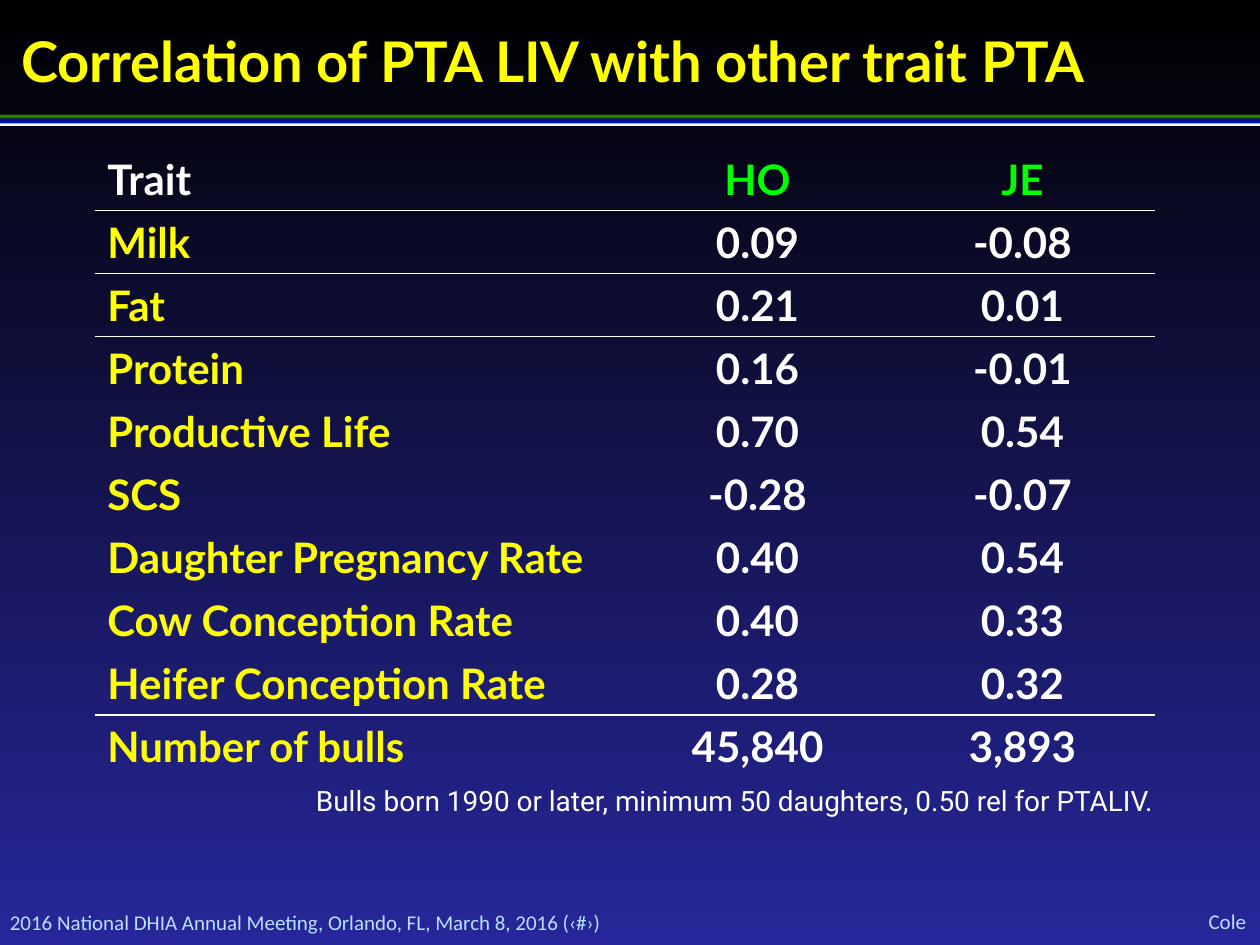
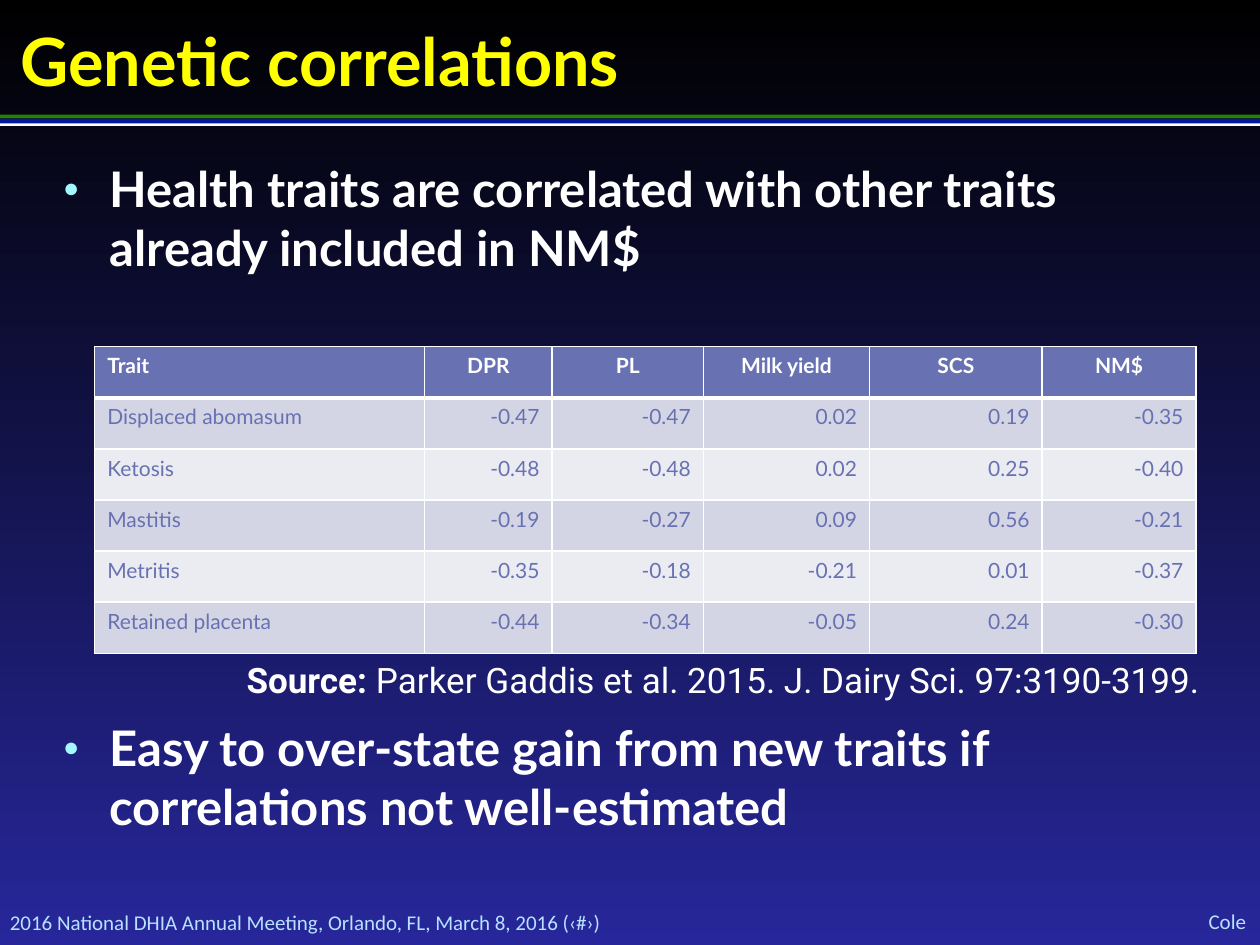
from dataclasses import dataclass

from lxml import etree
from pptx import Presentation
from pptx.dml.color import RGBColor
from pptx.enum.shapes import MSO_SHAPE
from pptx.enum.text import MSO_ANCHOR, MSO_AUTO_SIZE, PP_ALIGN
from pptx.oxml.ns import qn
from pptx.util import Cm, Pt

LEFT, CENTER, RIGHT = PP_ALIGN.LEFT, PP_ALIGN.CENTER, PP_ALIGN.RIGHT
TOP, MIDDLE = MSO_ANCHOR.TOP, MSO_ANCHOR.MIDDLE
RECTANGLE = MSO_SHAPE.RECTANGLE
NO_AUTOFIT = MSO_AUTO_SIZE.NONE
TITLE_AND_CONTENT, TITLE_ONLY = 1, 5
PLAIN_TABLE_STYLE = "{2D5ABB26-0587-4C30-8999-92F81FD0307C}"


@dataclass(frozen=True)
class Theme:
    heading_font: str = "Lato"
    note_font: str = "Roboto"
    footer_font: str = "Calibri"
    background_top: str = "000000"
    background_bottom: str = "27279B"
    yellow: str = "FFFF00"
    white: str = "FFFFFF"
    green: str = "00FF00"
    footer: str = "B8E2FF"
    bullet: str = "A3F8FF"
    band_green: str = "2A7E00"
    band_blue: str = "001799"
    table_head: str = "6871B2"
    table_dark: str = "D4D5E4"
    table_light: str = "EBEBF2"
    long_title_size: int = 32
    title_size: int = 38
    body_size: int = 28
    trait_size: int = 24
    source_size: int = 20
    note_size: int = 16
    small_size: int = 12


THEME = Theme()


@dataclass(frozen=True)
class Box:
    """Left, top, width and height in centimetres."""
    left: float
    top: float
    width: float
    height: float

    def lengths(self) -> tuple:
        return Cm(self.left), Cm(self.top), Cm(self.width), Cm(self.height)


@dataclass(frozen=True)
class TextStyle:
    font: str
    size: int
    color: str
    bold: bool = False
    align: int = LEFT


@dataclass(frozen=True)
class Band:
    box: Box
    color: str


@dataclass(frozen=True)
class Footer:
    text: str
    box: Box
    align: int


BANDS = (
    Band(Box(0, 2.31, 25.4, 0.08), THEME.band_green),
    Band(Box(0, 2.46, 25.4, 0.08), THEME.white),
    Band(Box(0, 2.39, 25.4, 0.1), THEME.band_blue),
)
FOOTERS = (
    Footer("2016 National DHIA Annual Meeting, Orlando, FL, March 8, 2016 (‹#›)",
           Box(0.2, 18.34, 21.59, 0.51), LEFT),
    Footer("Cole", Box(22.28, 18.31, 2.84, 0.53), RIGHT),
)

TRAIT_ROWS = (
    ("Trait", "HO", "JE"),
    ("Milk", "0.09", "-0.08"),
    ("Fat", "0.21", "0.01"),
    ("Protein", "0.16", "-0.01"),
    ("Productive Life", "0.70", "0.54"),
    ("SCS", "-0.28", "-0.07"),
    ("Daughter Pregnancy Rate", "0.40", "0.54"),
    ("Cow Conception Rate", "0.40", "0.33"),
    ("Heifer Conception Rate", "0.28", "0.32"),
    ("Number of bulls", "45,840", "3,893"),
)
RULED_ROWS = (0, 1, 8)

HEALTH_ROWS = (
    ("Trait", "DPR", "PL", "Milk yield", "SCS", "NM$"),
    ("Displaced abomasum", "-0.47", "-0.47", "0.02", "0.19", "-0.35"),
    ("Ketosis", "-0.48", "-0.48", "0.02", "0.25", "-0.40"),
    ("Mastitis", "-0.19", "-0.27", "0.09", "0.56", "-0.21"),
    ("Metritis", "-0.35", "-0.18", "-0.21", "0.01", "-0.37"),
    ("Retained placenta", "-0.44", "-0.34", "-0.05", "0.24", "-0.30"),
)
HEALTH_POINTS = (
    "Health traits are correlated with other traits already included in NM$",
    "Easy to over-state gain from new traits if correlations not well-estimated",
)


# Text
def style_paragraph(paragraph, style: TextStyle) -> None:
    paragraph.alignment = style.align
    font = paragraph.font
    font.name, font.size, font.bold = style.font, Pt(style.size), style.bold
    font.color.rgb = RGBColor.from_string(style.color)


def clear_margins(text_frame) -> None:
    text_frame.margin_left = text_frame.margin_right = 0
    text_frame.margin_top = text_frame.margin_bottom = 0


def add_text(slide, text: str, box: Box, style: TextStyle):
    text_frame = slide.shapes.add_textbox(*box.lengths()).text_frame
    text_frame.word_wrap = True
    paragraph = text_frame.paragraphs[0]
    paragraph.text = text
    style_paragraph(paragraph, style)
    return text_frame


def place(placeholder, box: Box):
    placeholder.left, placeholder.top, placeholder.width, placeholder.height = box.lengths()
    text_frame = placeholder.text_frame
    text_frame.auto_size = NO_AUTOFIT
    text_frame.vertical_anchor = TOP
    text_frame.word_wrap = True
    clear_margins(text_frame)
    return text_frame


def add_bullet(paragraph) -> None:
    properties = paragraph._p.get_or_add_pPr()
    properties.set("marL", str(Cm(0.94)))
    properties.set("indent", str(-Cm(0.94)))
    color = etree.Element(qn("a:buClr"))
    etree.SubElement(color, qn("a:srgbClr"), val=THEME.bullet)
    size = etree.Element(qn("a:buSzPct"), val="55000")
    character = etree.Element(qn("a:buChar"), char="●")
    defaults = properties.find(qn("a:defRPr"))
    for element in (color, size, character):
        defaults.addprevious(element)


# Tables
def set_border(cell, edge: str, width: float) -> None:
    """Draw a white line on one edge: L, R, T or B, given in that order."""
    properties = cell._tc.get_or_add_tcPr()
    line = etree.Element(qn(f"a:ln{edge}"), w=str(Pt(width)))
    fill = etree.SubElement(line, qn("a:solidFill"))
    etree.SubElement(fill, qn("a:srgbClr"), val=THEME.white)
    border_count = sum(child.tag.startswith(qn("a:ln")) for child in properties)
    properties.insert(border_count, line)


def add_plain_table(slide, rows: tuple, left: float, top: float,
                    widths: tuple, row_height: float):
    box = Box(left, top, sum(widths), row_height * len(rows))
    table = slide.shapes.add_table(len(rows), len(widths), *box.lengths()).table
    table.first_row = table.horz_banding = False
    table._tbl.tblPr.find(qn("a:tableStyleId")).text = PLAIN_TABLE_STYLE
    for column, width in zip(table.columns, widths):
        column.width = Cm(width)
    for row in table.rows:
        row.height = Cm(row_height)
    return table


def fill_cell(cell, text: str, style: TextStyle, fill: str | None = None) -> None:
    cell.text = text
    style_paragraph(cell.text_frame.paragraphs[0], style)
    if fill is None:
        cell.fill.background()
    else:
        cell.fill.solid()
        cell.fill.fore_color.rgb = RGBColor.from_string(fill)


def add_trait_table(slide) -> None:
    table = add_plain_table(slide, TRAIT_ROWS, 1.91, 2.97, (10.69, 5.34, 5.34), 1.27)
    for row, values in enumerate(TRAIT_ROWS):
        for column, value in enumerate(values):
            if row == 0:
                color = THEME.green if column else THEME.white
            else:
                color = THEME.white if column else THEME.yellow
            cell = table.cell(row, column)
            fill_cell(cell, value, TextStyle(THEME.heading_font, THEME.trait_size, color,
                                             True, CENTER if column else LEFT))
            if row - 1 in RULED_ROWS:
                set_border(cell, "T", 1)
            if row in RULED_ROWS:
                set_border(cell, "B", 1)


def add_health_table(slide) -> None:
    widths = (6.65, 2.57, 3.05, 3.35, 3.48, 3.1)
    table = add_plain_table(slide, HEALTH_ROWS, 1.91, 6.99, widths, 1.03)
    for row, values in enumerate(HEALTH_ROWS):
        is_head = row == 0
        color = THEME.white if is_head else THEME.table_head
        body_fill = THEME.table_dark if row % 2 else THEME.table_light
        for column, value in enumerate(values):
            align = LEFT if column == 0 else CENTER if is_head else RIGHT
            cell = table.cell(row, column)
            fill_cell(cell, value,
                      TextStyle(THEME.heading_font, THEME.small_size, color, is_head, align),
                      THEME.table_head if is_head else body_fill)
            for edge in "LR":
                set_border(cell, edge, 1)
            set_border(cell, "T", 3 if row == 1 else 1)
            set_border(cell, "B", 3 if is_head else 1)


# Shared slide parts
def set_background(presentation) -> None:
    fill = presentation.slide_master.background.fill
    fill.gradient()
    fill.gradient_angle = 270
    colors = (THEME.background_top, THEME.background_bottom)
    for position, (stop, color) in enumerate(zip(fill.gradient_stops, colors)):
        stop.position = position
        stop.color.rgb = RGBColor.from_string(color)


def add_base_slide(presentation, layout: int, title: str, title_box: Box, title_size: int):
    slide = presentation.slides.add_slide(presentation.slide_layouts[layout])
    for band in BANDS:
        shape = slide.shapes.add_shape(RECTANGLE, *band.box.lengths())
        shape.shadow.inherit = False
        shape.fill.solid()
        shape.fill.fore_color.rgb = RGBColor.from_string(band.color)
        shape.line.fill.background()
    for footer in FOOTERS:
        style = TextStyle(THEME.footer_font, THEME.small_size, THEME.footer, align=footer.align)
        text_frame = add_text(slide, footer.text, footer.box, style)
        text_frame.vertical_anchor = MIDDLE
        clear_margins(text_frame)
    paragraph = place(slide.shapes.title, title_box).paragraphs[0]
    paragraph.text = title
    style_paragraph(paragraph, TextStyle(THEME.heading_font, title_size, THEME.yellow, True))
    return slide


# Slides
def build_trait_slide(presentation) -> None:
    slide = add_base_slide(presentation, TITLE_ONLY, "Correlation of PTA LIV with other trait PTA",
                           Box(0.43, 0.53, 24.97, 1.37), THEME.long_title_size)
    add_trait_table(slide)
    add_text(slide, "Bulls born 1990 or later, minimum 50 daughters, 0.50 rel for PTALIV.",
             Box(2.11, 15.67, 21.39, 0.94),
             TextStyle(THEME.note_font, THEME.note_size, THEME.white, align=RIGHT))


def build_health_slide(presentation) -> None:
    slide = add_base_slide(presentation, TITLE_AND_CONTENT, "Genetic correlations",
                           Box(0.41, 0.41, 24.59, 1.63), THEME.title_size)
    add_health_table(slide)
    source = add_text(slide, "", Box(4.04, 13.16, 20.4, 1.12),
                      TextStyle(THEME.note_font, THEME.source_size, THEME.white, align=RIGHT))
    for text, bold in (("Source:", True),
                       (" Parker Gaddis et al. 2015. J. Dairy Sci. 97:3190-3199.", False)):
        run = source.paragraphs[0].add_run()
        run.text, run.font.bold = text, bold

    # The space after the first point leaves room for the table
    body = place(slide.placeholders[1], Box(1.27, 3.2, 22.86, 5.46))
    body.text = "\n".join(HEALTH_POINTS)
    for paragraph, space_after in zip(body.paragraphs, (252, 14)):
        style_paragraph(paragraph,
                        TextStyle(THEME.heading_font, THEME.body_size, THEME.white, True))
        paragraph.space_before, paragraph.space_after = Pt(0), Pt(space_after)
        add_bullet(paragraph)


def main() -> None:
    presentation = Presentation()
    presentation.slide_width, presentation.slide_height = Cm(25.4), Cm(19.05)
    set_background(presentation)
    build_trait_slide(presentation)
    build_health_slide(presentation)
    presentation.save("out.pptx")


if __name__ == "__main__":
    main()
